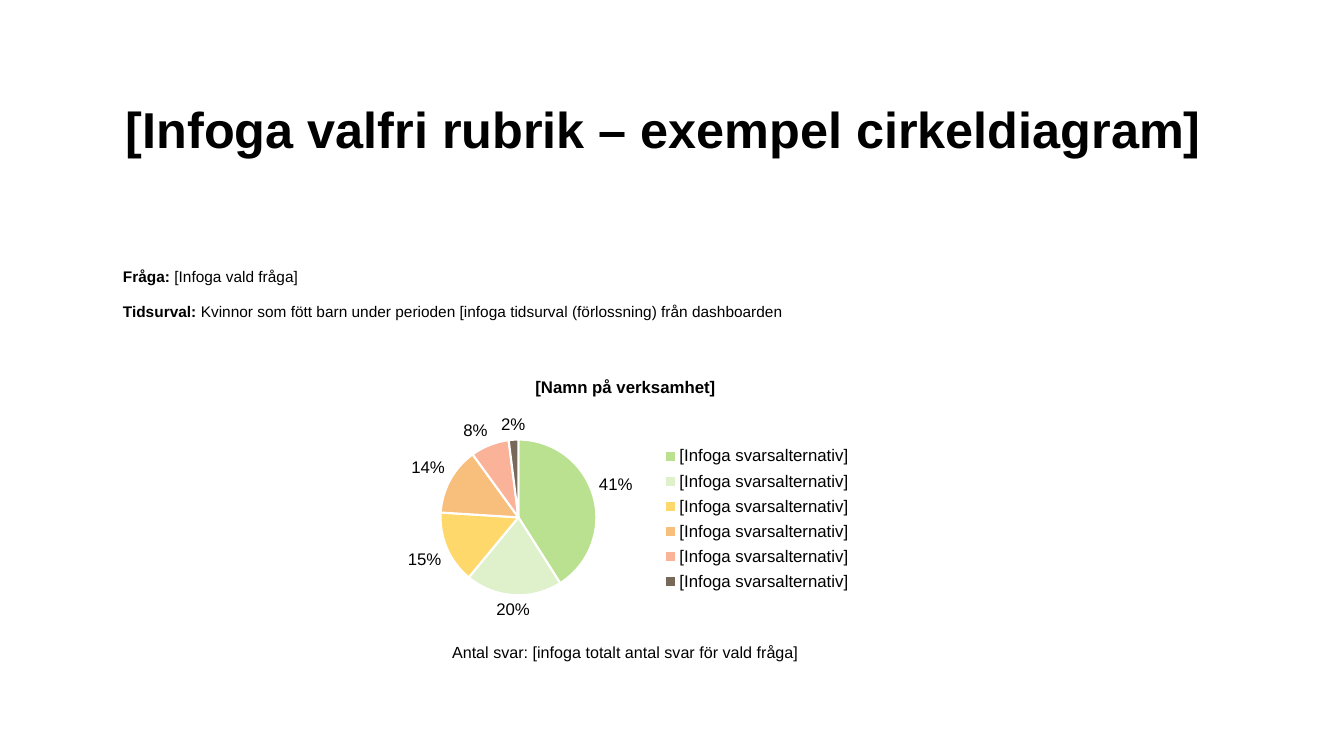
from dataclasses import dataclass
from lxml.etree import SubElement
from pptx import Presentation
from pptx.chart.data import CategoryChartData
from pptx.dml.color import RGBColor
from pptx.enum.chart import XL_CHART_TYPE, XL_LABEL_POSITION, XL_LEGEND_POSITION
from pptx.enum.text import MSO_ANCHOR, MSO_AUTO_SIZE, PP_ALIGN
from pptx.oxml.ns import qn
from pptx.util import Inches, Pt

WIDE, HIGH = Inches(13.33), Inches(7.5)


@dataclass(frozen=True)
class Theme:
    face: str = "Arial"
    ink: str = "000000"
    edge: str = "FFFFFF"
    head: float = 36
    body: float = 11
    foot: float = 11.5
    chart: float = 12
    slices: tuple = ("BAE18F", "DEF1CA", "FFD86C", "F8BE7C", "FAB398", "77695A")


THEME = Theme()


def area(left, top, width, height):
    return (int(WIDE * left / 100), int(HIGH * top / 100),
            int(WIDE * width / 100), int(HIGH * height / 100))


def style(font, size, bold=False):
    font.name = THEME.face
    font.size = Pt(size)
    font.bold = bold
    font.color.rgb = RGBColor.from_string(THEME.ink)


def add_text(slide, box, lines, size, align=PP_ALIGN.LEFT, after=0, indent=0, space=1.0):
    frame = slide.shapes.add_textbox(*area(*box)).text_frame
    frame.word_wrap = True
    frame.auto_size = MSO_AUTO_SIZE.NONE
    frame.vertical_anchor = MSO_ANCHOR.TOP
    for row, parts in enumerate(lines):
        para = frame.add_paragraph() if row else frame.paragraphs[0]
        para.alignment = align
        para.space_after = Pt(after)
        para.line_spacing = space
        para._p.get_or_add_pPr().set("marL", str(Inches(indent)))
        for text, bold in parts:
            run = para.add_run()
            run.text = text
            style(run.font, size, bold)
    return frame


def set_layout(parent, spot, shares, inner=False):
    for old in parent.findall(qn("c:layout")):
        parent.remove(old)
    layout = SubElement(parent, qn("c:layout"))
    parent.insert(spot, layout)
    manual = SubElement(layout, qn("c:manualLayout"))
    if inner:
        SubElement(manual, qn("c:layoutTarget")).set("val", "inner")
    for mode in ("xMode", "yMode"):
        SubElement(manual, qn(f"c:{mode}")).set("val", "edge")
    for side, share in zip("xywh", shares):
        SubElement(manual, qn(f"c:{side}")).set("val", str(share))


def add_pie(slide, box, title, names, values):
    data = CategoryChartData(number_format="0%")
    data.categories = names
    data.add_series(title, values)
    chart = slide.shapes.add_chart(XL_CHART_TYPE.PIE, *area(*box), data).chart
    style(chart.font, THEME.chart)
    chart.has_title = True
    chart.chart_title.include_in_layout = False
    head = chart.chart_title.text_frame
    head.text = title
    style(head.paragraphs[0].runs[0].font, THEME.chart, True)

    plot = chart.plots[0]
    plot.vary_by_categories = True
    for index, color in enumerate(THEME.slices):
        form = plot.series[0].points[index].format
        form.fill.solid()
        form.fill.fore_color.rgb = RGBColor.from_string(color)
        form.line.color.rgb = RGBColor.from_string(THEME.edge)
        form.line.width = Pt(1.5)
    labels = plot.series[0].data_labels
    labels.show_value = True
    labels.number_format = "0%"
    labels.number_format_is_linked = False
    labels.position = XL_LABEL_POSITION.OUTSIDE_END
    style(labels.font, THEME.chart)

    chart.has_legend = True
    legend = chart.legend
    legend.position = XL_LEGEND_POSITION.BOTTOM
    legend.include_in_layout = False
    style(legend.font, THEME.chart)
    set_layout(legend._element, 1, (0.57, 0.26, 0.4, 0.53))
    area_node = chart._chartSpace.find(".//" + qn("c:plotArea"))
    set_layout(area_node, 0, (0.12, 0.22, 0.32, 0.6), inner=True)


def main():
    deck = Presentation()
    deck.slide_width, deck.slide_height = WIDE, HIGH
    slide = deck.slides.add_slide(deck.slide_layouts[6])
    add_text(slide, (8.18, 34.67, 72.77, 10.4), [
        [("Fråga: ", True), ("[Infoga vald fråga]", False)],
        [("Tidsurval: ", True),
         ("Kvinnor som fött barn under perioden [infoga tidsurval (förlossning) från dashboarden", False)],
    ], THEME.body, after=12, indent=0.03)
    add_text(slide, (8.63, 12.93, 82.3, 17.87),
             [[("[Infoga valfri rubrik – exempel cirkeldiagram]", True)]],
             THEME.head, space=0.95)
    add_pie(slide, (28.43, 48, 36.23, 39.33), "[Namn på verksamhet]",
            ["[Infoga svarsalternativ]"] * len(THEME.slices),
            (0.41, 0.2, 0.15, 0.14, 0.08, 0.02))
    foot = add_text(slide, (17.93, 84.27, 57.16, 3.87),
                    [[("Antal svar: [infoga totalt antal svar för vald fråga]", False)]],
                    THEME.foot, PP_ALIGN.CENTER)
    foot.auto_size = MSO_AUTO_SIZE.SHAPE_TO_FIT_TEXT
    deck.save("out.pptx")


if __name__ == "__main__":
    main()
